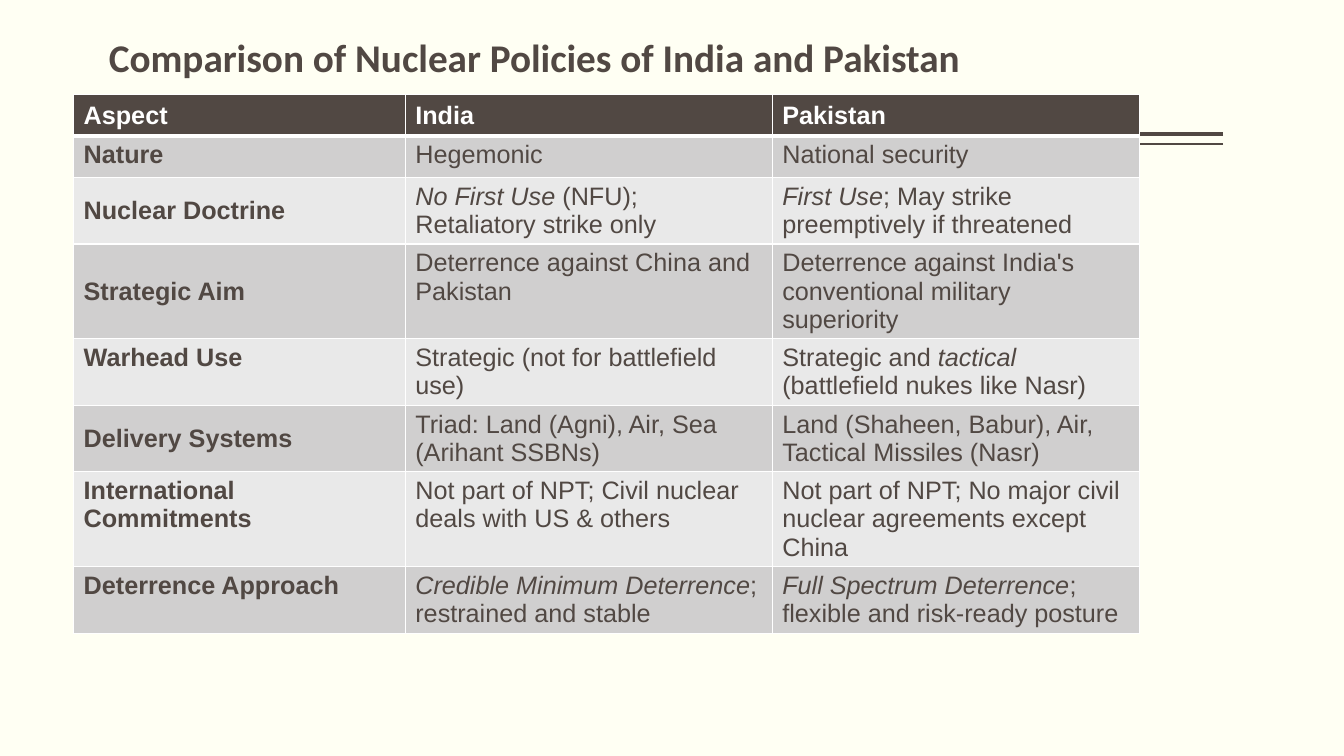
from lxml.etree import SubElement
from pptx import Presentation
from pptx.dml.color import RGBColor
from pptx.enum.shapes import MSO_CONNECTOR
from pptx.enum.text import MSO_ANCHOR, PP_ALIGN
from pptx.oxml.ns import qn
from pptx.util import Inches, Pt

ROWS = [
    ["Aspect", "India", "Pakistan"],
    ["Nature", "Hegemonic", "National security"],
    ["Nuclear Doctrine", "*No First Use* (NFU); Retaliatory strike only",
     "*First Use*; May strike preemptively if threatened"],
    ["Strategic Aim", "Deterrence against China and Pakistan",
     "Deterrence against India's conventional military superiority"],
    ["Warhead Use", "Strategic (not for battlefield use)",
     "Strategic and *tactical* (battlefield nukes like Nasr)"],
    ["Delivery Systems", "Triad: Land (Agni), Air, Sea (Arihant SSBNs)",
     "Land (Shaheen, Babur), Air, Tactical Missiles (Nasr)"],
    ["International Commitments", "Not part of NPT; Civil nuclear deals with US & others",
     "Not part of NPT; No major civil nuclear agreements except China"],
    ["Deterrence Approach", "*Credible Minimum Deterrence*; restrained and stable",
     "*Full Spectrum Deterrence*; flexible and risk-ready posture"],
]
MIDDLE_CELLS = {(0, 0), (0, 1), (0, 2), (2, 0), (2, 1), (3, 0), (5, 0)}


def color(value):
    return RGBColor.from_string(value)


def write(frame, text, font="Arial", size=18, fill="514843", bold=False, spacing=None):
    para = frame.paragraphs[0]
    para.alignment = PP_ALIGN.LEFT
    if spacing:
        para.line_spacing = spacing
    for index, part in enumerate(text.split("*")):
        if part:
            span = para.add_run()
            span.text = part
            span.font.name = font
            span.font.size = Pt(size)
            span.font.bold = bold
            span.font.italic = index % 2 == 1
            span.font.color.rgb = color(fill)


class PolicySlide:
    dark, white, paper = "514843", "FFFFFF", "FFFFF3"
    bands = ["E9E9E9", "D0CFCF"]

    def __init__(self, deck):
        self.page = deck.slides.add_slide(deck.slide_layouts[5])
        self.page.background.fill.solid()
        self.page.background.fill.fore_color.rgb = color(self.paper)

    def grid(self, *steps):
        return [Inches(step / 10) for step in steps]

    def rule(self, left, right, row, weight):
        line = self.page.shapes.add_connector(
            MSO_CONNECTOR.STRAIGHT, *self.grid(right, row, left, row))
        line.line.color.rgb = color(self.dark)
        line.line.width = Pt(weight)
        SubElement(line.element.spPr, qn("a:effectLst"))

    def title(self, text, left, top, width, height):
        box = self.page.shapes.title
        box.left, box.top, box.width, box.height = self.grid(left, top, width, height)
        frame = box.text_frame
        frame.word_wrap = True
        frame.vertical_anchor = MSO_ANCHOR.BOTTOM
        frame.margin_left = frame.margin_right = 0
        write(frame, text, font="Calibri", size=28, bold=True, spacing=0.9)

    def border(self, cell, bottom):
        properties = cell._tc.get_or_add_tcPr()
        for side, weight in zip("LRTB", (1, 1, 1, bottom)):
            edge = SubElement(properties, qn(f"a:ln{side}"), w=str(Pt(weight)))
            fill = SubElement(edge, qn("a:solidFill"))
            SubElement(fill, qn("a:srgbClr"), val=self.white)

    def table(self, rows, left, top, widths, row_height):
        place = self.grid(left, top, sum(widths), row_height * len(rows))
        table = self.page.shapes.add_table(len(rows), len(widths), *place).table
        for column, width in zip(table.columns, self.grid(*widths)):
            column.width = width
        for r, texts in enumerate(rows):
            header = r == 0
            table.rows[r].height = self.grid(row_height)[0]
            for c, text in enumerate(texts):
                cell = table.cell(r, c)
                self.border(cell, 3 if header else 1)
                cell.fill.solid()
                cell.fill.fore_color.rgb = color(self.dark if header else self.bands[r % 2])
                if (r, c) in MIDDLE_CELLS:
                    cell.vertical_anchor = MSO_ANCHOR.MIDDLE
                write(cell.text_frame, text, bold=header or c == 0,
                      fill=self.white if header else self.dark)


def main():
    deck = Presentation()
    deck.slide_width, deck.slide_height = Inches(13.33), Inches(7.5)
    slide = PolicySlide(deck)
    slide.rule(12.1, 121.3, 13.3, 3)
    slide.rule(12.1, 121.3, 14.3, 1)
    slide.table(ROWS, 7.3, 9.4, [32.9, 36.4, 36.4], 4.1)
    slide.title("Comparison of Nuclear Policies of India and Pakistan", 10.8, -3.5, 109.2, 12)
    deck.save("out.pptx")


if __name__ == "__main__":
    main()
